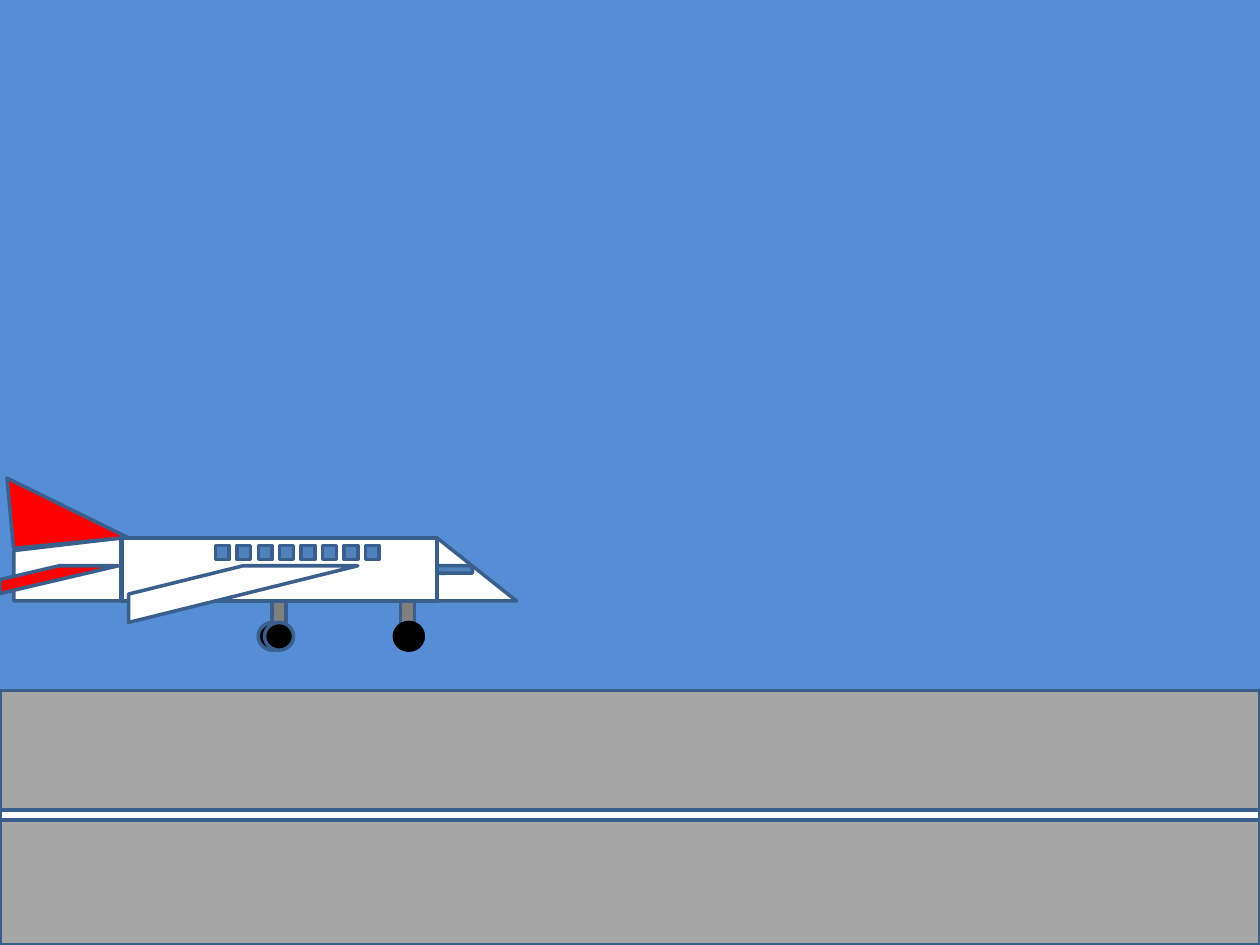
from typing import NamedTuple

from pptx import Presentation
from pptx.dml.color import RGBColor
from pptx.enum.shapes import MSO_SHAPE
from pptx.util import Inches, Pt

SKY = "558ED5"
OUTLINE = "3A5F8C"
ASPHALT = "A6A6A6"
WHITE = "FFFFFF"
RED = "FF0000"
GREY = "808080"
BLACK = "000000"
GLASS = "4F81BD"

WINDOW_COUNT = 8
WINDOW_LEFT = 1.71
WINDOW_PITCH = 0.17


class Part(NamedTuple):
    kind: MSO_SHAPE
    left: float
    top: float
    width: float
    height: float
    fill: str
    line: str = OUTLINE
    rotation: float = 0


def color(value: str) -> RGBColor:
    return RGBColor.from_string(value)


def draw_part(shapes, part: Part) -> None:
    box = (part.left, part.top, part.width, part.height)
    shape = shapes.add_shape(part.kind, *(Inches(length) for length in box))
    if part.rotation:
        shape.rotation = part.rotation
    shape.shadow.inherit = False
    shape.fill.solid()
    shape.fill.fore_color.rgb = color(part.fill)
    line_format = {"width": Pt(2)}
    shape.line.color.rgb = color(part.line)
    for attribute, value in line_format.items():
        setattr(shape.line, attribute, value)


def strut(left: float) -> Part:
    return Part(MSO_SHAPE.RECTANGLE, left, 4.77, 0.11, 0.22, GREY)


def wheel(left: float, line: str = OUTLINE) -> Part:
    return Part(MSO_SHAPE.OVAL, left, 4.94, 0.23, 0.22, BLACK, line)


def window(index: int) -> Part:
    left = WINDOW_LEFT + index * WINDOW_PITCH
    return Part(MSO_SHAPE.RECTANGLE, left, 4.33, 0.11, 0.11, GLASS)


RUNWAY = Part(MSO_SHAPE.RECTANGLE, 0, 5.48, 10, 2.02, ASPHALT)
CENTRE_LINE = Part(MSO_SHAPE.RECTANGLE, 0, 6.43, 10, 0.08, WHITE)

FUSELAGE = Part(MSO_SHAPE.RECTANGLE, 0.97, 4.27, 2.5, 0.5, WHITE)
NOSE = Part(MSO_SHAPE.RIGHT_TRIANGLE, 3.47, 4.27, 0.63, 0.5, WHITE)
WING = Part(MSO_SHAPE.DIAGONAL_STRIPE, 1.02, 4.49, 1.82, 0.45, WHITE)
FRONT_GEAR = [strut(3.18), wheel(3.13, BLACK)]
REAR_GEAR = [strut(2.16), wheel(2.05), wheel(2.1)]
TAIL = Part(MSO_SHAPE.FLOWCHART_MANUAL_INPUT, 0.11, 4.27, 0.85, 0.5, WHITE)
FIN = Part(MSO_SHAPE.RIGHT_TRIANGLE, 0.08, 3.75, 0.91, 0.56, RED, rotation=354.6)
WINDOWS = [window(index) for index in range(WINDOW_COUNT)]
COCKPIT = Part(MSO_SHAPE.ROUNDED_RECTANGLE, 3.47, 4.49, 0.28, 0.06, GLASS)
TAILPLANE = Part(MSO_SHAPE.DIAGONAL_STRIPE, 0, 4.49, 0.94, 0.22, RED)

AIRPLANE = [
    FUSELAGE, NOSE, WING, *FRONT_GEAR, *REAR_GEAR,
    TAIL, FIN, *WINDOWS, COCKPIT, TAILPLANE,
]


def main() -> None:
    presentation = Presentation()
    for attribute, value in {"slide_width": 10, "slide_height": 7.5}.items():
        setattr(presentation, attribute, Inches(value))
    slide = presentation.slides.add_slide(presentation.slide_layouts[6])
    slide.background.fill.solid()
    slide.background.fill.fore_color.rgb = color(SKY)

    for part in (RUNWAY, CENTRE_LINE):
        draw_part(slide.shapes, part)
    airplane = slide.shapes.add_group_shape()
    for part in AIRPLANE:
        draw_part(airplane.shapes, part)

    presentation.save("out.pptx")


if __name__ == "__main__":
    main()
